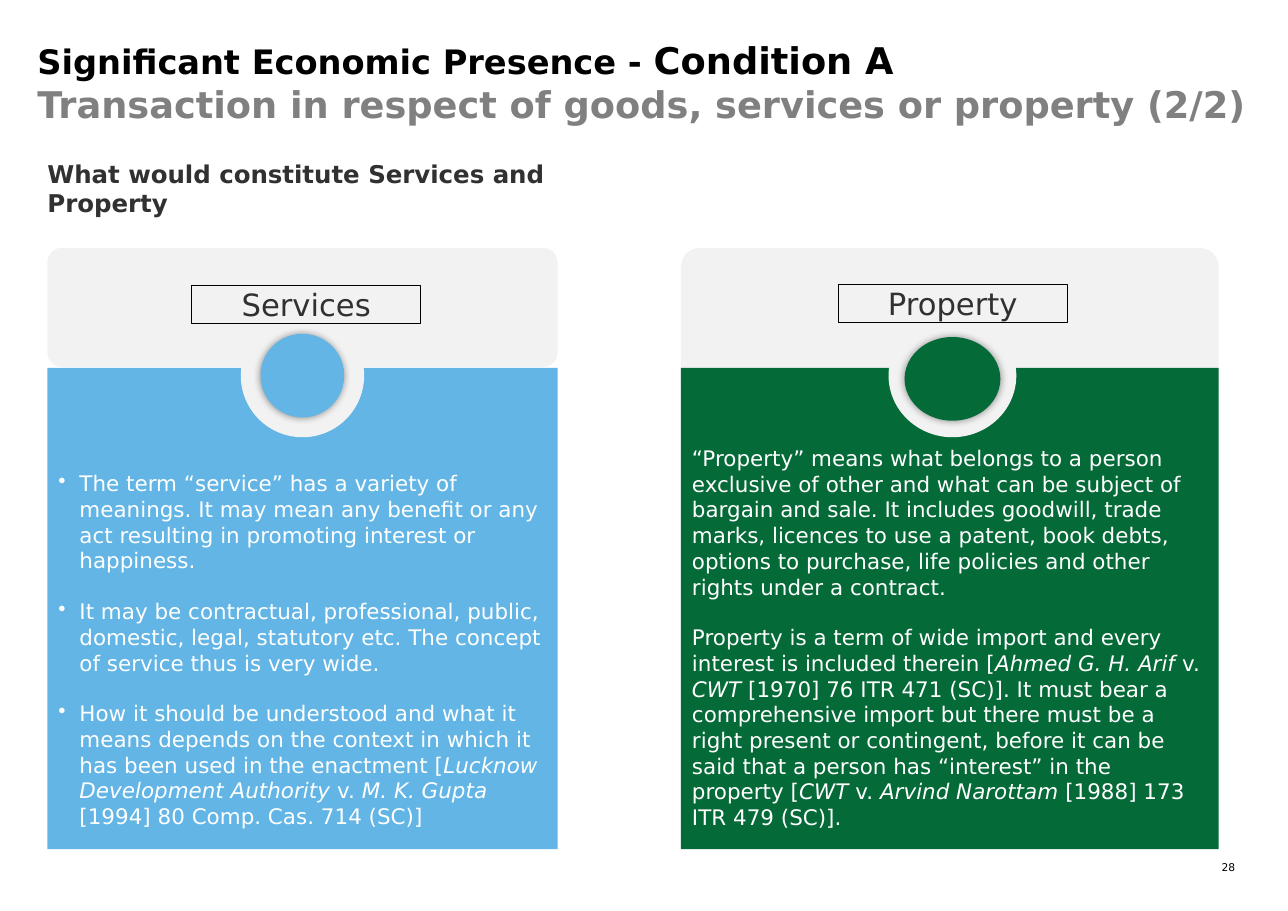
from dataclasses import dataclass

from lxml import etree
from pptx import Presentation
from pptx.dml.color import RGBColor
from pptx.enum.shapes import MSO_SHAPE
from pptx.enum.text import MSO_ANCHOR, PP_ALIGN
from pptx.oxml.ns import qn
from pptx.shapes.autoshape import Shape
from pptx.slide import Slide
from pptx.util import Emu, Inches, Pt

RECT, ROUND, OVAL = MSO_SHAPE.RECTANGLE, MSO_SHAPE.ROUNDED_RECTANGLE, MSO_SHAPE.OVAL
TOP, MIDDLE = MSO_ANCHOR.TOP, MSO_ANCHOR.MIDDLE
LEFT, CENTER, RIGHT = PP_ALIGN.LEFT, PP_ALIGN.CENTER, PP_ALIGN.RIGHT

FONT = "DejaVu Sans"
WIDTH, HEIGHT = Inches(11.69), Inches(8.27)
BLACK, DARK, GREY, PALE, WHITE = "000000", "313131", "808080", "F2F2F2", "FFFFFF"
BLUE, GREEN = "62B5E5", "046A38"

HEADER_TOP, BODY_TOP, BODY_H = 27.21, 40.39, 52.84
RING_TOP, RING_H, DISC_H = 34.46, 13.54, 9.19
LABEL_W, LABEL_H = 17.79, 4.23
BODY_PAD, BULLET_INDENT = 0.86, 1.63


@dataclass
class Card:
    title: str
    color: str
    left: float
    width: float
    header_h: float
    axis: float
    ring_w: float
    disc_w: float
    disc_top: float
    label_axis: float
    label_top: float
    text_pad: float
    bullet: str
    paragraphs: list[str]


CARDS = [
    Card("Services", BLUE, 3.68, 39.61, 13.06, 23.48, 9.58, 6.5, 36.64, 23.78, 31.32, 11.25, "•", [
        "The term “service” has a variety of meanings. It may mean any benefit or any act "
        "resulting in promoting interest or happiness.",
        "It may be contractual, professional, public, domestic, legal, statutory etc. "
        "The concept of service thus is very wide.",
        "How it should be understood and what it means depends on the context in which it has "
        "been used in the enactment [*Lucknow Development Authority* v. *M. K. Gupta* "
        "[1994] 80 Comp. Cas. 714 (SC)]",
    ]),
    Card("Property", GREEN, 52.87, 41.75, 17.17, 73.95, 9.92, 7.44, 37, 73.98, 31.2, 8.46, "", [
        "“Property” means what belongs to a person exclusive of other and what can be subject of "
        "bargain and sale. It includes goodwill, trade marks, licences to use a patent, book debts, "
        "options to purchase, life policies and other rights under a contract.",
        "Property is a term of wide import and every interest is included therein "
        "[*Ahmed G. H. Arif* v. *CWT* [1970] 76 ITR 471 (SC)]. It must bear a comprehensive import "
        "but there must be a right present or contingent, before it can be said that a person has "
        "“interest” in the property [*CWT* v. *Arvind Narottam* [1988] 173 ITR 479 (SC)].",
    ]),
]


def rgb(color: str) -> RGBColor:
    return RGBColor.from_string(color)


def cols(n: float) -> Emu:
    return Emu(round(WIDTH * n / 100))


def rows(n: float) -> Emu:
    return Emu(round(HEIGHT * n / 100))


def add_box(s: Slide, kind: int, x: float, y: float, w: float, h: float,
            fill: str = "", line: str = "") -> Shape:
    sp = s.shapes.add_shape(kind, cols(x), rows(y), cols(w), rows(h))
    sp.shadow.inherit = False
    if fill:
        sp.fill.solid()
        sp.fill.fore_color.rgb = rgb(fill)
    else:
        sp.fill.background()
    if line:
        sp.line.color.rgb = rgb(line)
        sp.line.width = Pt(0.75)
    else:
        sp.line.fill.background()
    return sp


def add_text_box(s: Slide, x: float, y: float, w: float, h: float) -> Shape:
    return s.shapes.add_textbox(cols(x), rows(y), cols(w), rows(h))


def add_glow(sp: Shape) -> None:
    effects = sp._element.spPr.find(qn("a:effectLst"))
    shadow = etree.SubElement(effects, qn("a:outerShdw"), blurRad=str(Pt(5)), dist="0",
                              dir="0", algn="ctr", rotWithShape="0")
    color = etree.SubElement(shadow, qn("a:srgbClr"), val=BLACK)
    etree.SubElement(color, qn("a:alpha"), val="40000")


def set_margins(sp: Shape, side: float = 0, top: float = 0) -> None:
    tf = sp.text_frame
    tf.margin_left = tf.margin_right = cols(side)
    tf.margin_top, tf.margin_bottom = rows(top), 0


def write(sp: Shape, text: str, *, size: float, color: str, bold: bool = False,
          align: int = LEFT, anchor: int = TOP, bullet: str = "", gap: float = 0,
          new_line: bool = True) -> None:
    tf = sp.text_frame
    tf.word_wrap = True
    tf.vertical_anchor = anchor
    p = tf.paragraphs[-1]
    if p.runs and new_line:
        p = tf.add_paragraph()
        p.space_before = Pt(gap)
    p.alignment = align
    if bullet:
        pPr = p._p.get_or_add_pPr()
        indent = cols(BULLET_INDENT)
        pPr.set("marL", str(indent))
        pPr.set("indent", str(-indent))
        etree.SubElement(pPr, qn("a:buChar"), char=bullet)
    for i, part in enumerate(text.split("*")):
        r = p.add_run()
        r.text = part
        r.font.name = FONT
        r.font.size = Pt(size)
        r.font.bold = bold
        r.font.italic = i % 2 == 1
        r.font.color.rgb = rgb(color)


def draw_card(s: Slide, card: Card) -> None:
    header = add_box(s, ROUND, card.left, HEADER_TOP, card.width, card.header_h, PALE)
    header.adjustments[0] = 0.12
    body = add_box(s, RECT, card.left, BODY_TOP, card.width, BODY_H, card.color)
    set_margins(body, BODY_PAD, card.text_pad)
    for text in card.paragraphs:
        write(body, text, size=14, color=WHITE, bullet=card.bullet, gap=16.3)
    add_box(s, OVAL, card.axis - card.ring_w / 2, RING_TOP, card.ring_w, RING_H, PALE)
    disc = add_box(s, OVAL, card.axis - card.disc_w / 2, card.disc_top, card.disc_w, DISC_H, card.color)
    add_glow(disc)
    label = add_box(s, RECT, card.label_axis - LABEL_W / 2, card.label_top, LABEL_W, LABEL_H, line=BLACK)
    set_margins(label)
    write(label, card.title, size=20, color=DARK, align=CENTER, anchor=MIDDLE)


def main() -> None:
    prs = Presentation()
    prs.slide_width, prs.slide_height = WIDTH, HEIGHT
    s = prs.slides.add_slide(prs.slide_layouts[6])

    title = add_text_box(s, 2.91, 4.11, 96.07, 9.55)
    set_margins(title)
    write(title, "Significant Economic Presence - ", size=22, color=BLACK, bold=True)
    write(title, "Condition A", size=24, color=BLACK, bold=True, new_line=False)
    write(title, "Transaction in respect of goods, services or property (2/2)",
          size=24, color=GREY, bold=True)

    question = add_text_box(s, 3.68, 17.41, 48.4, 6.6)
    set_margins(question)
    write(question, "What would constitute Services and Property", size=16, color=DARK, bold=True)

    for card in CARDS:
        draw_card(s, card)

    number = add_text_box(s, 93.33, 94.44, 2.57, 1.45)
    set_margins(number)
    write(number, "28", size=7, color=BLACK, align=RIGHT)

    prs.save("out.pptx")


if __name__ == "__main__":
    main()
